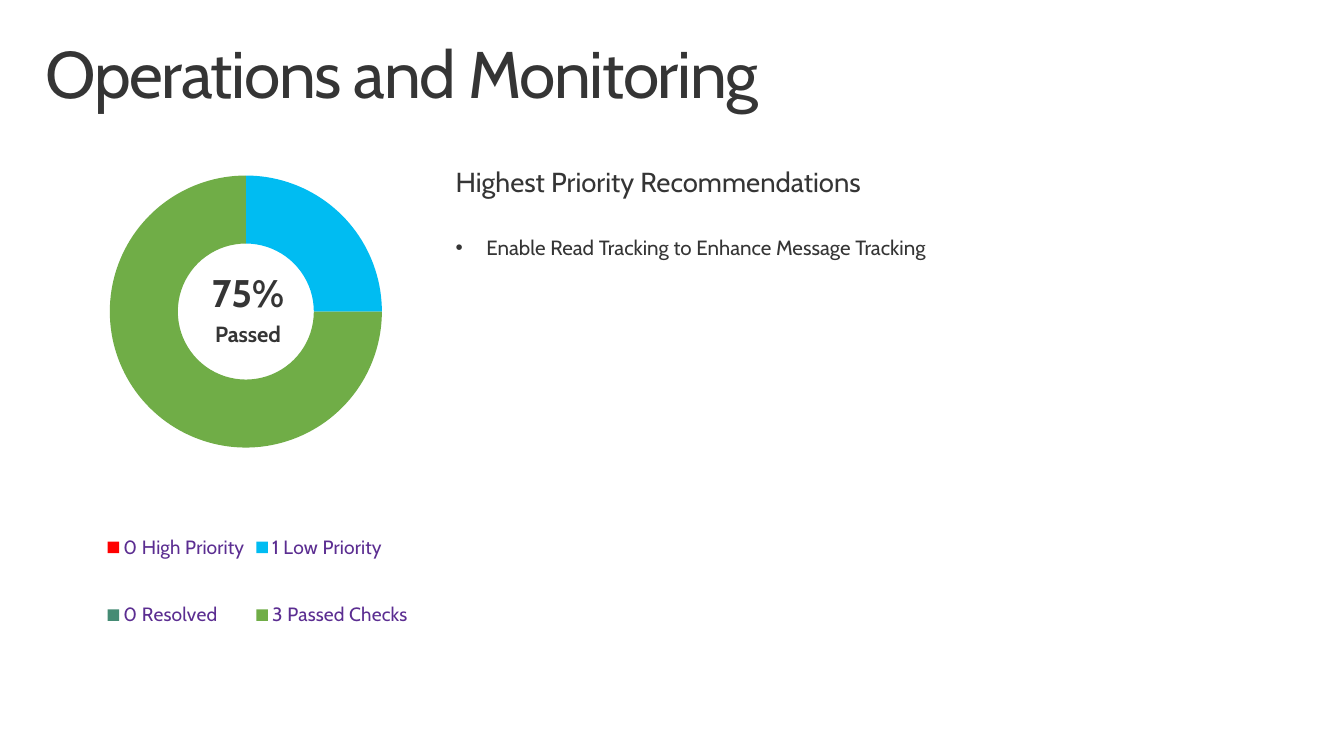
from dataclasses import dataclass

from lxml import etree
from pptx import Presentation
from pptx.chart.data import CategoryChartData
from pptx.dml.color import RGBColor
from pptx.enum.chart import XL_CHART_TYPE, XL_LEGEND_POSITION
from pptx.enum.text import MSO_ANCHOR, MSO_AUTO_SIZE, PP_ALIGN
from pptx.oxml import parse_xml
from pptx.oxml.ns import nsdecls, qn
from pptx.util import Cm, Pt

DOUGHNUT = XL_CHART_TYPE.DOUGHNUT
BOTTOM = XL_LEGEND_POSITION.BOTTOM
TOP = MSO_ANCHOR.TOP
GROW = MSO_AUTO_SIZE.SHAPE_TO_FIT_TEXT
NO_FIT = MSO_AUTO_SIZE.NONE
CENTER = PP_ALIGN.CENTER
LEFT = PP_ALIGN.LEFT


@dataclass(frozen=True)
class Theme:
    font: str = "Cabin"
    ink: str = "353535"
    legend_ink: str = "5B2D91"
    title: int = 48
    score: int = 28
    heading: int = 20
    score_label: int = 16
    body: int = 15
    legend: int = 14
    chart: int = 10


@dataclass(frozen=True)
class Box:
    left: float
    top: float
    width: float
    height: float

    def lengths(self):
        return Cm(self.left), Cm(self.top), Cm(self.width), Cm(self.height)


THEME = Theme()
CHECKS = [
    ("0 High Priority ", 0, "FF0000"),
    ("", None, "001D49"),
    ("1 Low Priority", 25, "00BCF2"),
    ("", None, "A3008F"),
    ("0 Resolved", 0, "458B74"),
    ("", None, "D1D1D1"),
    ("3 Passed Checks", 75, "70AD47"),
]
RECOMMENDATIONS = ["Enable Read Tracking to Enhance Message Tracking"]


def style_font(font, size, color=THEME.ink, bold=False):
    font.name = THEME.font
    font.size = Pt(size)
    font.bold = bold
    font.color.rgb = RGBColor.from_string(color)


def add_frame(page, box, side, edge, fit):
    frame = page.shapes.add_textbox(*box.lengths()).text_frame
    frame.word_wrap = True
    frame.auto_size = fit
    frame.vertical_anchor = TOP
    frame.margin_left = frame.margin_right = Cm(side)
    frame.margin_top = frame.margin_bottom = Cm(edge)
    return frame


def write(para, text, size, bold=False, align=LEFT, after=6):
    para.alignment = align
    para.line_spacing = 0.9
    para.space_after = Pt(after)
    span = para.add_run()
    span.text = text
    style_font(span.font, size, bold=bold)
    return span


def add_bullet(para):
    properties = para._p.get_or_add_pPr()
    properties.set("marL", str(Cm(0.79)))
    properties.set("indent", str(Cm(-0.79)))
    etree.SubElement(properties, qn("a:buFont"), typeface="Arial")
    etree.SubElement(properties, qn("a:buChar"), char="•")


def manual_layout(left, top, width, height, inner=False):
    target = '<c:layoutTarget val="inner"/>' if inner else ""
    return parse_xml(
        f'<c:layout {nsdecls("c")}><c:manualLayout>{target}'
        '<c:xMode val="edge"/><c:yMode val="edge"/>'
        f'<c:x val="{left}"/><c:y val="{top}"/>'
        f'<c:w val="{width}"/><c:h val="{height}"/>'
        "</c:manualLayout></c:layout>"
    )


def replace_layout(parent, layout, index):
    for old in parent.findall(qn("c:layout")):
        parent.remove(old)
    parent.insert(index, layout)


def add_title(page, box):
    frame = add_frame(page, box, 0.41, 0.25, NO_FIT)
    span = write(frame.paragraphs[0], "Operations and Monitoring", THEME.title, after=0)
    span.font._element.set("spc", "-100")


def add_legend(chart):
    chart.has_legend = True
    legend = chart.legend
    legend.position = BOTTOM
    legend.include_in_layout = False
    style_font(legend.font, THEME.legend, THEME.legend_ink)
    element = legend._element
    hidden = [index for index, (name, _, _) in enumerate(CHECKS) if not name]
    for place, index in enumerate(hidden, 1):
        entry = parse_xml(
            f'<c:legendEntry {nsdecls("c")}><c:idx val="{index}"/>'
            '<c:delete val="1"/></c:legendEntry>'
        )
        element.insert(place, entry)
    replace_layout(element, manual_layout(0.21, 0.66, 0.66, 0.31), len(hidden) + 1)


def add_checks_chart(page, box):
    data = CategoryChartData()
    data.categories = [name for name, _, _ in CHECKS]
    data.add_series("Series 1", [value for _, value, _ in CHECKS])
    chart = page.shapes.add_chart(DOUGHNUT, *box.lengths(), data).chart
    chart.has_title = False
    style_font(chart.font, THEME.chart)
    plot = chart.plots[0]
    plot.vary_by_categories = True
    plot._element.find(qn("c:holeSize")).set("val", "68")
    for index, (_, _, color) in enumerate(CHECKS):
        point = plot.series[0].points[index]
        point.format.fill.solid()
        point.format.fill.fore_color.rgb = RGBColor.from_string(color)
        point.format.line.fill.background()
    area = chart._chartSpace.chart.plotArea
    replace_layout(area, manual_layout(0.23, 0.07, 0.57, 0.56, inner=True), 0)
    add_legend(chart)


def add_score(page, box):
    frame = add_frame(page, box, 0.51, 0.41, GROW)
    write(frame.paragraphs[0], "75%", THEME.score, True, CENTER)
    write(frame.add_paragraph(), "Passed", THEME.score_label, True, CENTER)


def add_recommendations(page, box):
    frame = add_frame(page, box, 0.51, 0.41, GROW)
    heading = "Highest Priority Recommendations"
    write(frame.paragraphs[0], heading, THEME.heading, after=28)
    for recommendation in RECOMMENDATIONS:
        para = frame.add_paragraph()
        write(para, recommendation, THEME.body)
        add_bullet(para)


def main():
    deck = Presentation()
    deck.slide_width = Cm(34.54)
    deck.slide_height = Cm(19.43)
    page = deck.slides.add_slide(deck.slide_layouts[6])
    add_title(page, Box(0.76, 0.81, 33.02, 2.54))
    add_checks_chart(page, Box(0, 2.79, 12.27, 14.91))
    add_score(page, Box(4.57, 6.63, 3.61, 8.1))
    add_recommendations(page, Box(11.2, 3.94, 21.36, 3.18))
    deck.save("out.pptx")


if __name__ == "__main__":
    main()
